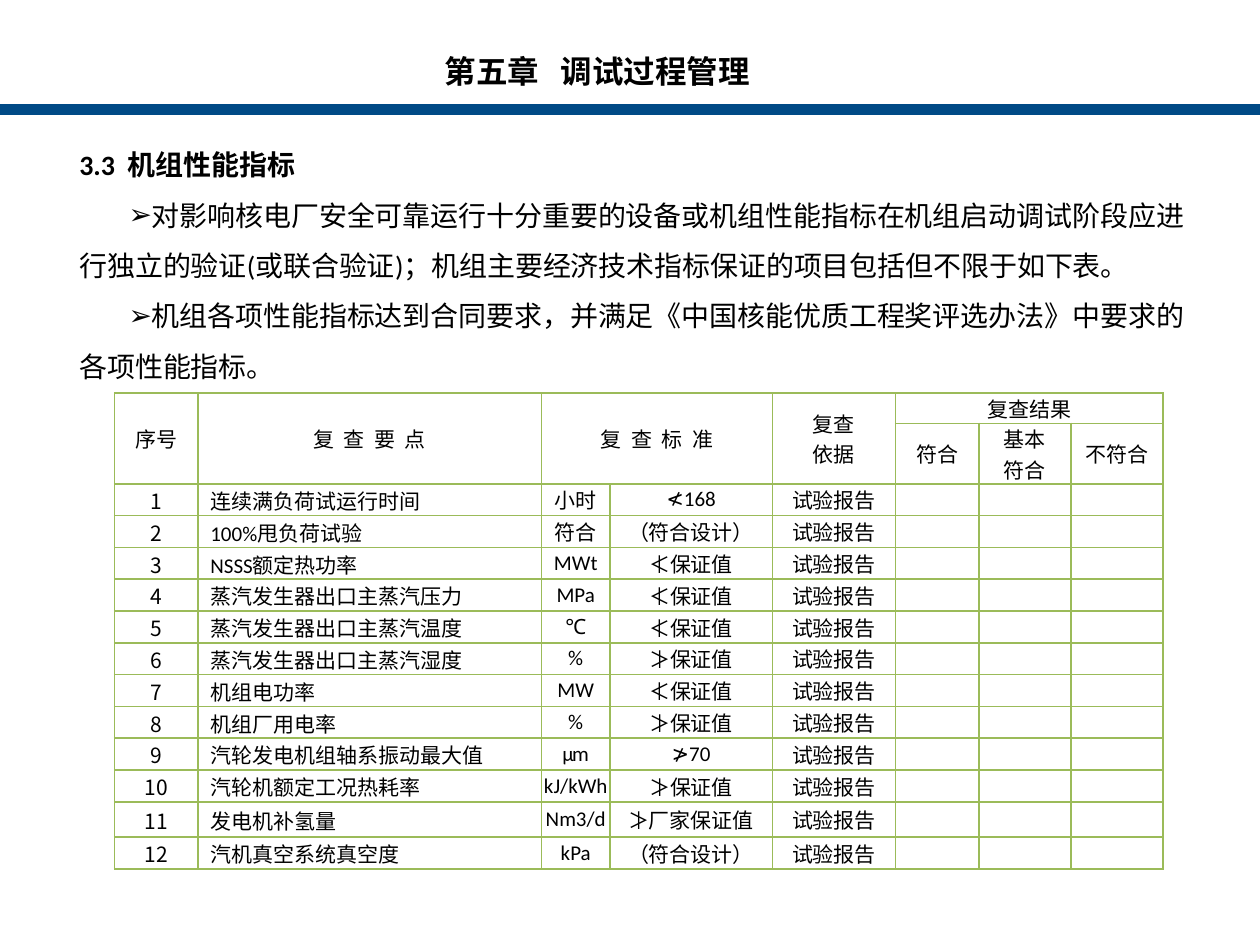
from dataclasses import dataclass

from lxml import etree
from pptx import Presentation
from pptx.dml.color import RGBColor
from pptx.enum.shapes import MSO_SHAPE
from pptx.enum.text import MSO_ANCHOR, MSO_AUTO_SIZE, PP_ALIGN
from pptx.oxml.ns import qn
from pptx.util import Inches, Pt

RECTANGLE = MSO_SHAPE.RECTANGLE
TOP, MIDDLE = MSO_ANCHOR.TOP, MSO_ANCHOR.MIDDLE
LEFT, CENTER, JUSTIFY = PP_ALIGN.LEFT, PP_ALIGN.CENTER, PP_ALIGN.JUSTIFY
FIT_SHAPE = MSO_AUTO_SIZE.SHAPE_TO_FIT_TEXT
TITLE_AND_CONTENT = 1


@dataclass(frozen=True)
class Theme:
    text: RGBColor = RGBColor(0, 0, 0)
    bar: RGBColor = RGBColor(0x00, 0x4A, 0x86)
    grid: str = "9BBB59"
    latin: str = "Calibri"
    chinese: str = "Noto Sans CJK SC"
    title_size: float = 18
    body_size: float = 16
    table_size: float = 12


@dataclass(frozen=True)
class Span:
    text: str
    spacing: float = 0


@dataclass(frozen=True)
class Heading:
    text: str
    row: int
    column: int
    rows: int = 1
    columns: int = 1
    spacing: float = 0


@dataclass(frozen=True)
class Indicator:
    name: str
    unit: str
    standard: str
    unit_spacing: float = 0


THEME = Theme()
TIGHT = -0.3
TITLE = [Span("第五章"), Span(" ", 8.2), Span("调试过程管理")]
SECTION = [Span("3.3"), Span(" ", 3.6), Span("机组性能指标")]
POINTS = [
    "对影响核电厂安全可靠运行十分重要的设备或机组性能指标在机组启动调试阶段应进行独立的验证(或联合验证)；"
    "机组主要经济技术指标保证的项目包括但不限于如下表。",
    "机组各项性能指标达到合同要求，并满足《中国核能优质工程奖评选办法》中要求的各项性能指标。",
]
HEADINGS = [
    Heading("序号", 0, 0, rows=2),
    Heading("复 查 要 点", 0, 1, rows=2, spacing=1.35),
    Heading("复 查 标 准", 0, 2, rows=2, columns=2, spacing=1.35),
    Heading("复查\n依据", 0, 4, rows=2),
    Heading("复查结果", 0, 5, columns=3),
    Heading("符合", 1, 5),
    Heading("基本\n符合", 1, 6),
    Heading("不符合", 1, 7),
]
INDICATORS = [
    Indicator("连续满负荷试运行时间", "小时", "≮168"),
    Indicator("100%甩负荷试验", "符合", "（符合设计）"),
    Indicator("NSSS额定热功率", "MWt", "≮保证值"),
    Indicator("蒸汽发生器出口主蒸汽压力", "MPa", "≮保证值"),
    Indicator("蒸汽发生器出口主蒸汽温度", "℃", "≮保证值"),
    Indicator("蒸汽发生器出口主蒸汽湿度", "%", "≯保证值"),
    Indicator("机组电功率", "MW", "≮保证值"),
    Indicator("机组厂用电率", "%", "≯保证值", -1),
    Indicator("汽轮发电机组轴系振动最大值", "μm", "≯70", -1),
    Indicator("汽轮机额定工况热耗率", "kJ/kWh", "≯保证值"),
    Indicator("发电机补氢量", "Nm3/d", "≯厂家保证值"),
    Indicator("汽机真空系统真空度", "kPa", "（符合设计）"),
]
EVIDENCE = "试验报告"
COLUMN_WIDTHS = [0.66, 2.73, 0.54, 1.29, 0.98, 0.66, 0.73, 0.73]
TABLE_HEIGHT = 3.78
HEADER_HEIGHTS = [0.24, 0.48]
TALL_ROW, TALL_HEIGHT = 12, 0.28


def apply(target, values: dict) -> None:
    for name, value in values.items():
        setattr(target, name, value)


def place(shape, left: float, top: float, width: float, height: float) -> None:
    sides = dict(left=left, top=top, width=width, height=height)
    apply(shape, {name: Inches(value) for name, value in sides.items()})


def write(para, spans: list[Span], size: float, bold: bool = False, latin: str = THEME.latin) -> None:
    for span in spans:
        run = para.add_run()
        run.text = span.text
        apply(run.font, dict(size=Pt(size), bold=bold, name=latin))
        run.font.color.rgb = THEME.text
        properties = run.font._element
        etree.SubElement(properties, qn("a:ea"), typeface=THEME.chinese)
        if span.spacing:
            properties.set("spc", str(round(span.spacing * 100)))


def format_body(para, margin: float, indent: float, bullet: str = "") -> None:
    apply(para, dict(alignment=LEFT, line_spacing=1.5, space_before=Pt(0)))
    properties = para._p.get_or_add_pPr()
    properties.set("marL", str(Inches(margin)))
    properties.set("indent", str(Inches(indent)))
    if bullet:
        etree.SubElement(properties, qn("a:buChar"), char=bullet)
    else:
        etree.SubElement(properties, qn("a:buNone"))


def format_cell(cell) -> None:
    edges = ("margin_left", "margin_right", "margin_top", "margin_bottom")
    apply(cell, dict.fromkeys(edges, 0) | {"vertical_anchor": MIDDLE})
    properties = cell._tc.get_or_add_tcPr()
    for side in ("lnL", "lnR", "lnT", "lnB"):
        line = etree.SubElement(properties, qn(f"a:{side}"), w=str(Pt(1)))
        fill = etree.SubElement(line, qn("a:solidFill"))
        etree.SubElement(fill, qn("a:srgbClr"), val=THEME.grid)
    cell.fill.background()
    # Blank cells would otherwise stretch their row at the default size
    end = etree.SubElement(cell.text_frame.paragraphs[0]._p, qn("a:endParaRPr"))
    end.set("sz", str(round(THEME.table_size * 100)))


def write_cell(cell, text: str, spacing: float = 0, align=CENTER, latin: str = THEME.latin) -> None:
    box = cell.text_frame
    for index, line in enumerate(text.split("\n")):
        para = box.add_paragraph() if index else box.paragraphs[0]
        para.alignment = align
        write(para, [Span(line, spacing)], THEME.table_size, latin=latin)


def add_indicator_table(page) -> None:
    row_count = len(HEADER_HEIGHTS) + len(INDICATORS)
    frame = page.shapes.add_table(row_count, len(COLUMN_WIDTHS), Inches(0.91), Inches(3.12),
                                  Inches(sum(COLUMN_WIDTHS)), Inches(TABLE_HEIGHT))
    table = frame.table
    apply(table, dict(first_row=False, horz_banding=False))
    for column, width in zip(table.columns, COLUMN_WIDTHS):
        column.width = Inches(width)
    plain = (TABLE_HEIGHT - sum(HEADER_HEIGHTS) - TALL_HEIGHT) / (len(INDICATORS) - 1)
    heights = HEADER_HEIGHTS + [plain] * len(INDICATORS)
    heights[TALL_ROW] = TALL_HEIGHT
    for row, height in zip(table.rows, heights):
        row.height = Inches(height)
    for cell in table.iter_cells():
        format_cell(cell)

    # Header with merged cells
    for item in HEADINGS:
        cell = table.cell(item.row, item.column)
        if item.rows * item.columns > 1:
            cell.merge(table.cell(item.row + item.rows - 1, item.column + item.columns - 1))
        write_cell(cell, item.text, item.spacing)

    # One row per indicator; the three result columns stay blank
    for number, item in enumerate(INDICATORS, 1):
        cells = table.rows[number + len(HEADER_HEIGHTS) - 1].cells
        for cell in (cells[0], cells[1]):
            cell.margin_top = Inches(0.01)
        write_cell(cells[0], str(number), latin=THEME.chinese)
        write_cell(cells[1], item.name, align=JUSTIFY)
        cells[1].text_frame.paragraphs[0]._p.get_or_add_pPr().set("indent", str(Inches(0.1)))
        write_cell(cells[2], item.unit, item.unit_spacing)
        write_cell(cells[3], item.standard, TIGHT if item.standard[1:] == "保证值" else 0)
        write_cell(cells[4], EVIDENCE)


def main() -> None:
    deck = Presentation()
    apply(deck, dict(slide_width=Inches(10), slide_height=Inches(7.5)))
    page = deck.slides.add_slide(deck.slide_layouts[TITLE_AND_CONTENT])

    # Chapter title and the bar below it
    title = page.shapes.title
    place(title, 3.43, 0.36, 2.66, 0.4)
    apply(title.text_frame, dict(word_wrap=False, auto_size=FIT_SHAPE, vertical_anchor=TOP))
    para = title.text_frame.paragraphs[0]
    para.alignment = LEFT
    write(para, TITLE, THEME.title_size, bold=True)
    bar = page.shapes.add_shape(RECTANGLE, Inches(0), Inches(0.84), Inches(10), Inches(0.06))
    bar.shadow.inherit = False
    bar.fill.solid()
    bar.fill.fore_color.rgb = bar.line.color.rgb = THEME.bar
    bar.line.width = Pt(2)

    # Section heading and points
    body = page.placeholders[1]
    place(body, 0.43, 0.99, 9.13, 2.12)
    box = body.text_frame
    apply(box, dict(word_wrap=True, auto_size=FIT_SHAPE, vertical_anchor=TOP))
    format_body(box.paragraphs[0], 0, 0.1)
    write(box.paragraphs[0], SECTION, THEME.body_size, bold=True)
    for point in POINTS:
        para = box.add_paragraph()
        format_body(para, 0.1, 0.39, "➢")
        write(para, [Span(point)], THEME.body_size)

    add_indicator_table(page)
    deck.save("out.pptx")


if __name__ == "__main__":
    main()
